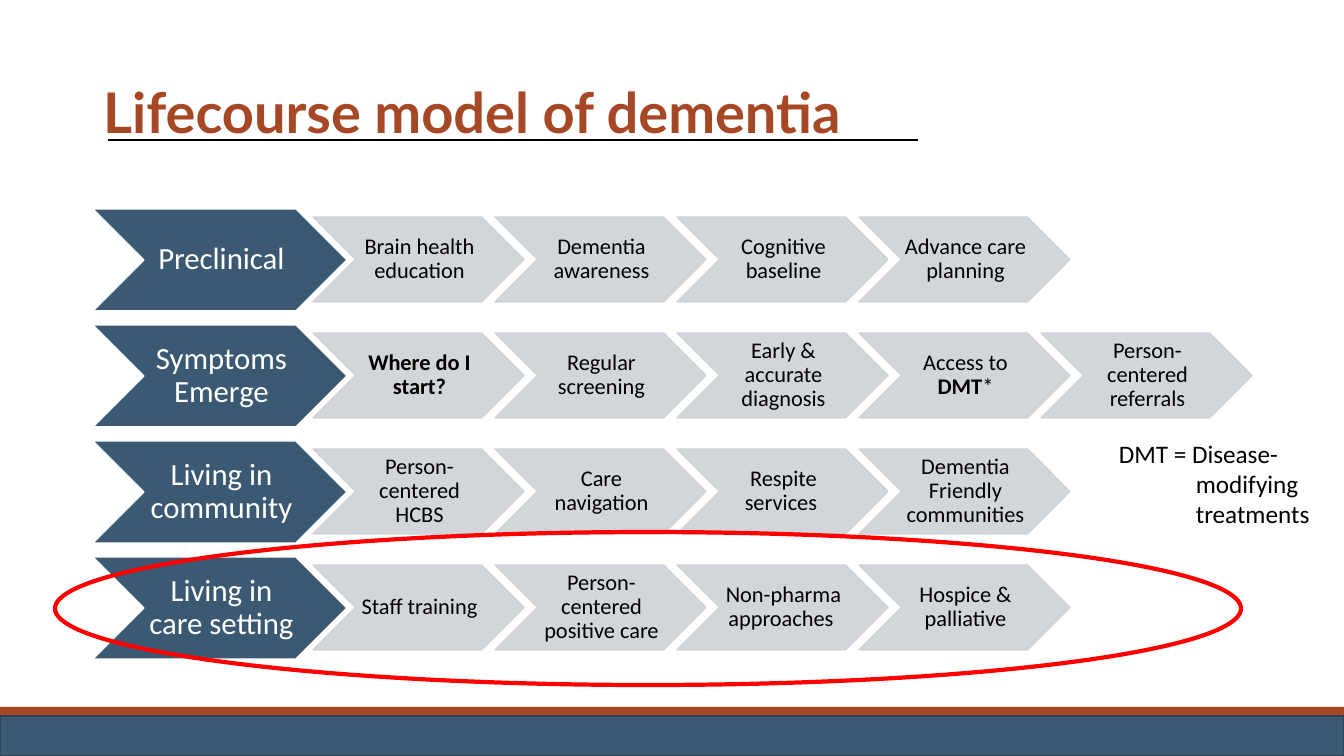
from lxml import etree
from pptx import Presentation
from pptx.dml.color import RGBColor
from pptx.enum import shapes, text
from pptx.oxml.ns import qn
from pptx import util as u

PX = 914400 / 100.8  # EMU in one px
COLORS = {"rust": "A64826", "navy": "3C5973", "navy_edge": "2C4255",
          "grey": "CED1D5", "black": "000000", "white": "FFFFFF", "red": "FF0000"}

# Each stage with its steps; a step is plain text or a list of (text, bold) runs
STAGES = [
    ("Preclinical", ["Brain health education", "Dementia awareness",
                     "Cognitive baseline", "Advance care planning"]),
    ("Symptoms Emerge", [[("Where do I start?", True)], "Regular screening",
                         "Early & accurate diagnosis",
                         [("Access to ", False), ("DMT", True), ("*", False)],
                         "Person- centered referrals"]),
    ("Living in community", ["Person-centered HCBS", "Care navigation",
                             "Respite services ", "Dementia Friendly communities"]),
    ("Living in care setting", ["Staff training", "Person-centered positive care",
                                "Non-pharma approaches ", "Hospice & palliative"]),
]
STAGE_LEFT, STAGE_TOP, STAGE_W, STAGE_H, ROW_PITCH = 93, 209, 254, 102, 116
STEP_LEFT, STEP_DROP, STEP_W, STEP_H, STEP_PITCH = 313, 8, 211, 85, 182


def px(*lengths):
    return [u.Emu(round(length * PX)) for length in lengths]


def rgb(name):
    return RGBColor.from_string(COLORS[name])


def set_font(paragraph, size, color, name="Calibri"):
    font = paragraph.font
    font.size, font.name, font.color.rgb = u.Pt(size), name, rgb(color)


def set_alpha(color_format_parent, percent):
    for color in color_format_parent.iter(qn("a:srgbClr")):
        etree.SubElement(color, qn("a:alpha")).set("val", str(percent * 1000))


def add_outline_shape(slide, kind, box, fill=None, line=None, width=1):
    shape = slide.shapes.add_shape(kind, *px(*box))
    shape.shadow.inherit = False
    if fill:
        shape.fill.solid()
        shape.fill.fore_color.rgb = rgb(fill)
    else:
        shape.fill.background()
    if line:
        shape.line.color.rgb = rgb(line)
        shape.line.width = u.Pt(width)
    else:
        shape.line.fill.background()
    return shape


def add_chevron(slide, box, label, size, color, fill, line, insets, alpha=None):
    chevron = add_outline_shape(slide, shapes.MSO_SHAPE.CHEVRON, box, fill, line)
    if alpha:
        set_alpha(chevron._element.spPr, alpha)
    frame = chevron.text_frame
    frame.word_wrap = True
    frame.vertical_anchor = text.MSO_ANCHOR.MIDDLE
    (frame.margin_left, frame.margin_top,
     frame.margin_right, frame.margin_bottom) = px(*insets)
    paragraph = frame.paragraphs[0]
    paragraph.alignment = text.PP_ALIGN.CENTER
    paragraph.line_spacing = 0.9
    set_font(paragraph, size, color)
    for words, bold in [(label, False)] if isinstance(label, str) else label:
        run = paragraph.add_run()
        run.text = words
        if bold:
            run.font.bold = True


def add_stage_row(slide, row, stage, steps):
    top = STAGE_TOP + row * ROW_PITCH
    add_chevron(slide, (STAGE_LEFT, top, STAGE_W, STAGE_H), stage, 22, "white",
                "navy", "white", (3, 2, 0, 2))
    for column, step in enumerate(steps):
        box = (STEP_LEFT + column * STEP_PITCH, top + STEP_DROP, STEP_W, STEP_H)
        add_chevron(slide, box, step, 16, "black", "grey", "grey", (2, 1, 0, 1), 90)


def add_title(slide):
    title = slide.shapes.title
    title.left, title.top, title.width, title.height = px(93, 57, 1159, 116)
    title.text_frame.text = "Lifecourse model of dementia"
    title.text_frame.vertical_anchor = text.MSO_ANCHOR.MIDDLE
    heading = title.text_frame.paragraphs[0]
    heading.alignment = text.PP_ALIGN.LEFT
    heading.line_spacing = 0.9
    set_font(heading, 40, "rust", "Lato")
    heading.font.bold = True


def add_title_rule(slide):
    rule = slide.shapes.add_connector(shapes.MSO_CONNECTOR.STRAIGHT,
                                      *px(108, 140, 918, 140))
    rule.line.color.rgb = rgb("black")
    rule.line.width = u.Pt(1.25)
    etree.SubElement(rule._element.spPr, qn("a:effectLst"))


def add_footnote(slide):
    frame = slide.shapes.add_textbox(*px(1109, 433, 235, 102)).text_frame
    frame.word_wrap = True
    footnote = frame.paragraphs[0]
    footnote.text = "DMT = Disease-modifying treatments"
    hang = px(77)[0]
    properties = footnote._p.get_or_add_pPr()
    properties.set("marL", str(hang))
    properties.set("indent", str(-hang))
    set_font(footnote, 18, "black")


def main():
    deck = Presentation()
    deck.slide_width, deck.slide_height = px(1344, 756)
    slide = deck.slides.add_slide(deck.slide_layouts[5])

    # Footer bands
    band = shapes.MSO_SHAPE.RECTANGLE
    add_outline_shape(slide, band, (0, 707, 1344, 49), "rust")
    add_outline_shape(slide, band, (0, 716, 1344, 40), "navy", "navy_edge")

    # Heading
    add_title_rule(slide)
    add_title(slide)

    # Stages and their steps
    for row, (stage, steps) in enumerate(STAGES):
        add_stage_row(slide, row, stage, steps)

    # Footnote and highlight of the last stage
    add_footnote(slide)
    add_outline_shape(slide, shapes.MSO_SHAPE.OVAL, (55, 532, 1186, 153),
                      line="red", width=3)

    deck.save("out.pptx")


if __name__ == "__main__":
    main()
